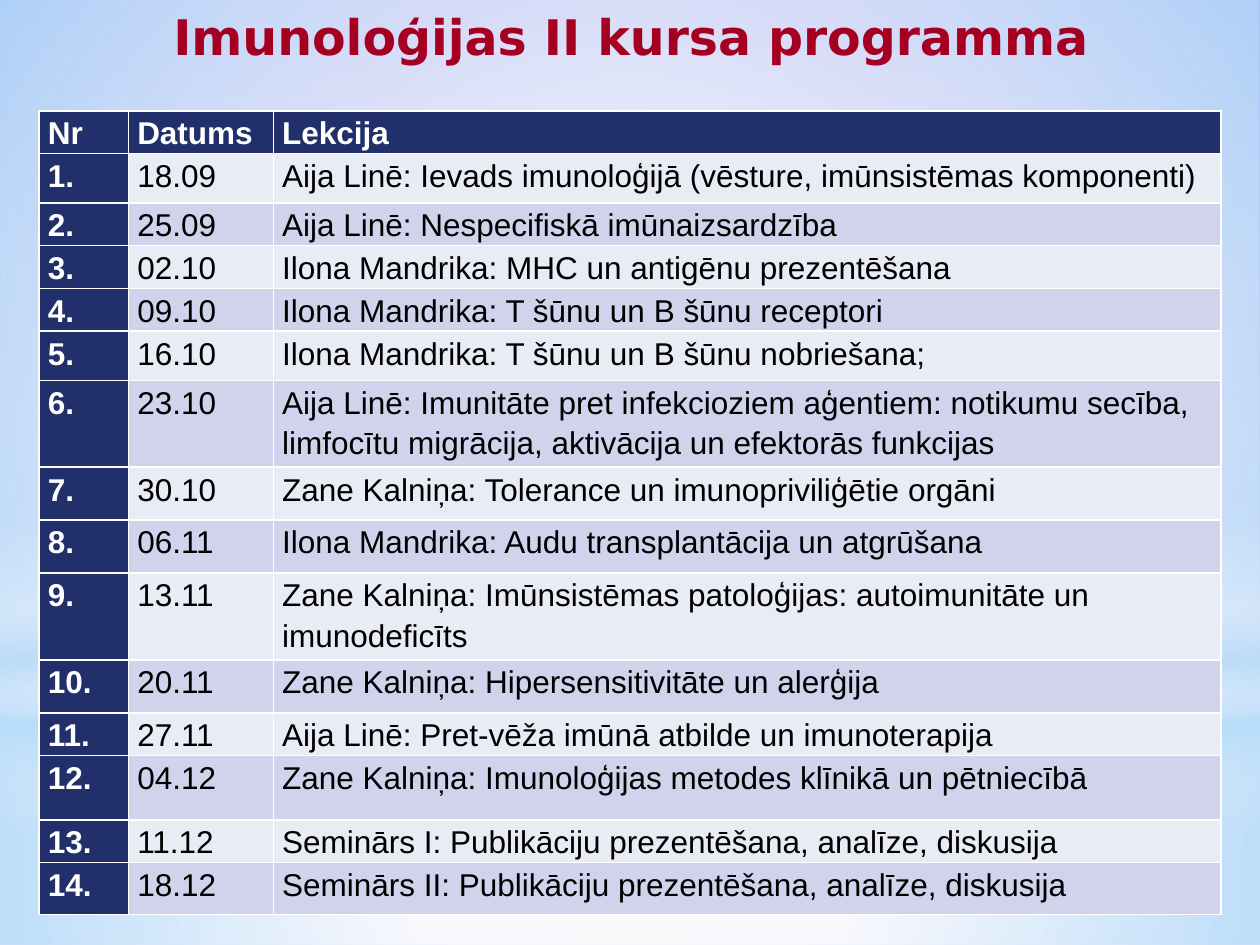
"""Build the immunology course programme slide."""
from pptx import Presentation
from pptx.dml.color import RGBColor
from pptx.enum.shapes import MSO_SHAPE
from pptx.enum.text import MSO_ANCHOR, MSO_AUTO_SIZE, PP_ALIGN
from pptx.oxml import parse_xml
from pptx.oxml.ns import nsdecls, qn
from pptx.util import Inches, Pt

NAVY = RGBColor(0x21, 0x30, 0x6A)
RED = RGBColor(0xA5, 0x00, 0x21)
WHITE = RGBColor(0xFF, 0xFF, 0xFF)
BLACK = RGBColor(0x00, 0x00, 0x00)
SKY = RGBColor(0xB4, 0xDC, 0xFA)
BANDS = [RGBColor(0xE9, 0xEB, 0xF5), RGBColor(0xD0, 0xD3, 0xEB)]
BACKGROUND = [
    (0, RGBColor(0x98, 0xA4, 0xED), 100),
    (50, RGBColor(0xC1, 0xC7, 0xF2), 100),
    (100, RGBColor(0xE1, 0xE3, 0xF8), 100),
]


def write(tf, text, *, font="Arial", size=18, color=BLACK, bold=False, align=None, spacing=None):
    p = tf.paragraphs[0]
    p.alignment = align
    p.line_spacing = spacing
    r = p.add_run()
    r.text = text
    r.font.name = font
    r.font.size = Pt(size)
    r.font.bold = bold
    r.font.color.rgb = color


def set_gradient(props, stops, radial=False):
    stop_xml = "".join(
        f'<a:gs pos="{pos * 1000}"><a:srgbClr val="{color}">'
        f'<a:alpha val="{opacity * 1000}"/></a:srgbClr></a:gs>'
        for pos, color, opacity in stops
    )
    if radial:
        shade = '<a:path path="circle"><a:fillToRect l="50000" t="50000" r="50000" b="50000"/></a:path>'
    else:
        shade = '<a:lin ang="5400000" scaled="0"/>'
    grad = parse_xml(
        f'<a:gradFill {nsdecls("a")} rotWithShape="1"><a:gsLst>{stop_xml}</a:gsLst>{shade}</a:gradFill>'
    )
    props.replace(props.find(qn("a:noFill")), grad)


prs = Presentation()
prs.slide_width = Inches(10)
prs.slide_height = Inches(7.5)
s = prs.slides.add_slide(prs.slide_layouts[5])

s.background.fill.background()
set_gradient(s.element.find(".//" + qn("p:bgPr")), BACKGROUND)

glows = [
    (MSO_SHAPE.RECTANGLE, 5.58, 1.92, True, [(0, WHITE, 91), (37, WHITE, 76), (100, SKY, 79)]),
    (MSO_SHAPE.RECTANGLE, 0, 5.58, True, [(0, WHITE, 89), (48, WHITE, 62), (100, SKY, 79)]),
    (MSO_SHAPE.RECTANGLE, 4.12, 2.5, False,
     [(0, WHITE, 0), (29, WHITE, 30), (45, SKY, 40), (55, WHITE, 26), (65, SKY, 60), (100, WHITE, 0)]),
    (MSO_SHAPE.OVAL, 1.75, 5.58, True, [(0, WHITE, 100), (56, WHITE, 0)]),
]
for kind, top, height, radial, stops in glows:
    sp = s.shapes.add_shape(kind, 0, Inches(top), prs.slide_width, Inches(height))
    sp.shadow.inherit = False
    sp.fill.background()
    set_gradient(sp.element.spPr, stops, radial)
    sp.line.fill.background()

title = s.shapes.title
s.shapes.element.append(title.element)
title.left, title.top, title.width, title.height = 0, 0, Inches(10.01), Inches(0.88)
tf = title.text_frame
tf.auto_size = MSO_AUTO_SIZE.NONE
tf.word_wrap = True
tf.vertical_anchor = MSO_ANCHOR.TOP
write(tf, "Imunoloģijas II kursa programma", font="DejaVu Sans", size=28,
      color=RED, bold=True, align=PP_ALIGN.CENTER)

lectures = [
    (0.39, "18.09", "Aija Linē: Ievads imunoloģijā (vēsture, imūnsistēmas komponenti)"),
    (0.34, "25.09", "Aija Linē: Nespecifiskā imūnaizsardzība"),
    (0.34, "02.10", "Ilona Mandrika: MHC un antigēnu prezentēšana"),
    (0.34, "09.10", "Ilona Mandrika: T šūnu un B šūnu receptori"),
    (0.39, "16.10", "Ilona Mandrika: T šūnu un B šūnu nobriešana;"),
    (0.69, "23.10", "Aija Linē: Imunitāte pret infekcioziem aģentiem: notikumu secība, "
                    "limfocītu migrācija, aktivācija un efektorās funkcijas"),
    (0.42, "30.10", "Zane Kalniņa: Tolerance un imunopriviliģētie orgāni"),
    (0.42, "06.11", "Ilona Mandrika: Audu transplantācija un atgrūšana"),
    (0.69, "13.11", "Zane Kalniņa: Imūnsistēmas patoloģijas: autoimunitāte un imunodeficīts"),
    (0.42, "20.11", "Zane Kalniņa: Hipersensitivitāte un alerģija"),
    (0.34, "27.11", "Aija Linē: Pret-vēža imūnā atbilde un imunoterapija"),
    (0.51, "04.12", "Zane Kalniņa: Imunoloģijas metodes klīnikā un pētniecībā"),
    (0.34, "11.12", "Seminārs I: Publikāciju prezentēšana, analīze, diskusija"),
    (0.41, "18.12", "Seminārs II: Publikāciju prezentēšana, analīze, diskusija"),
]
rows = [(0.34, "Nr", "Datums", "Lekcija")]
rows += [(height, f"{n}.", date, topic) for n, (height, date, topic) in enumerate(lectures, 1)]

table = s.shapes.add_table(len(rows), 3, Inches(0.31), Inches(0.88), Inches(9.38), Inches(6.4)).table
for col, width in zip(table.columns, (0.71, 1.15, 7.52)):
    col.width = Inches(width)

for i, (height, *texts) in enumerate(rows):
    table.rows[i].height = Inches(height)
    for j, text in enumerate(texts):
        cell = table.cell(i, j)
        heading = i == 0 or j == 0
        cell.margin_left = cell.margin_right = Inches(0.07)
        cell.margin_top = cell.margin_bottom = 0
        cell.fill.solid()
        cell.fill.fore_color.rgb = NAVY if heading else BANDS[(i - 1) % 2]
        write(cell.text_frame, text, color=WHITE if heading else BLACK, bold=heading, spacing=1.15)
        tcPr = cell._tc.get_or_add_tcPr()
        for k, side in enumerate("LRTB"):
            tcPr.insert(k, parse_xml(
                f'<a:ln{side} {nsdecls("a")} w="{Pt(1)}"><a:solidFill>'
                f'<a:srgbClr val="{WHITE}"/></a:solidFill></a:ln{side}>'))

prs.save("out.pptx")
